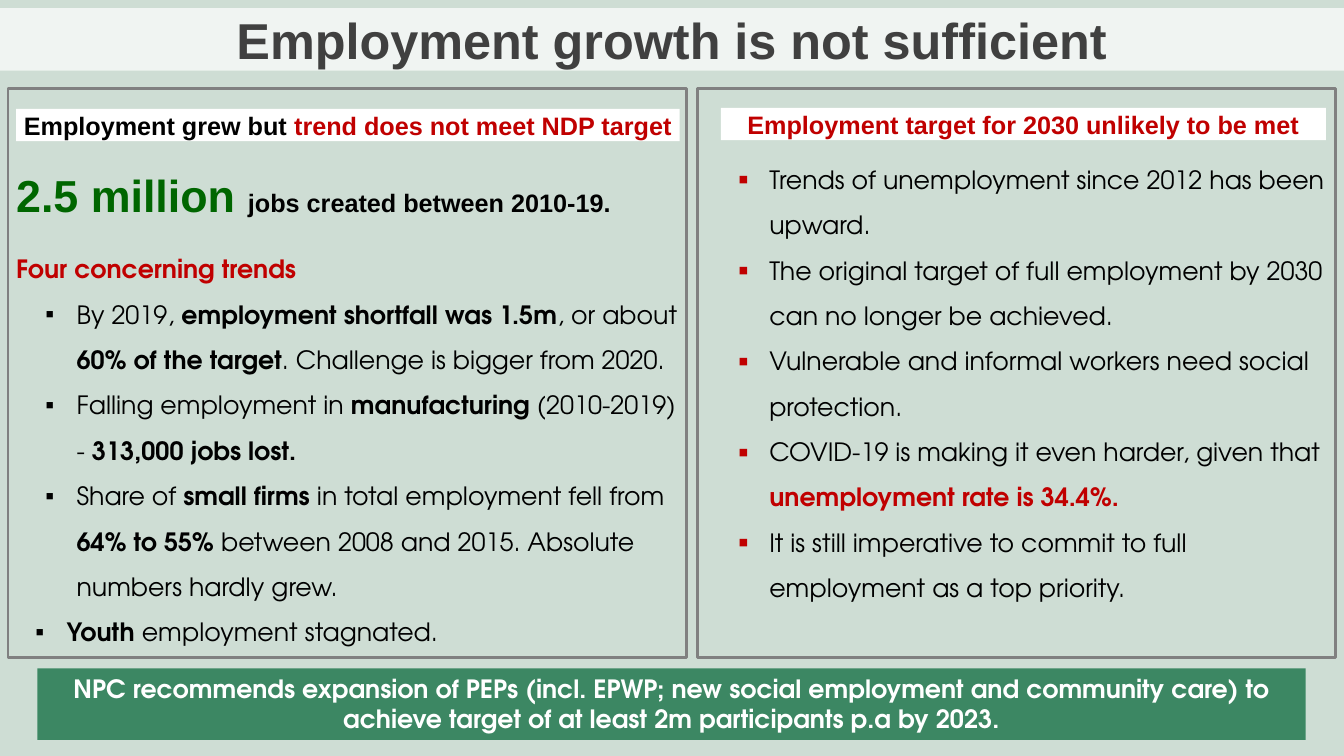
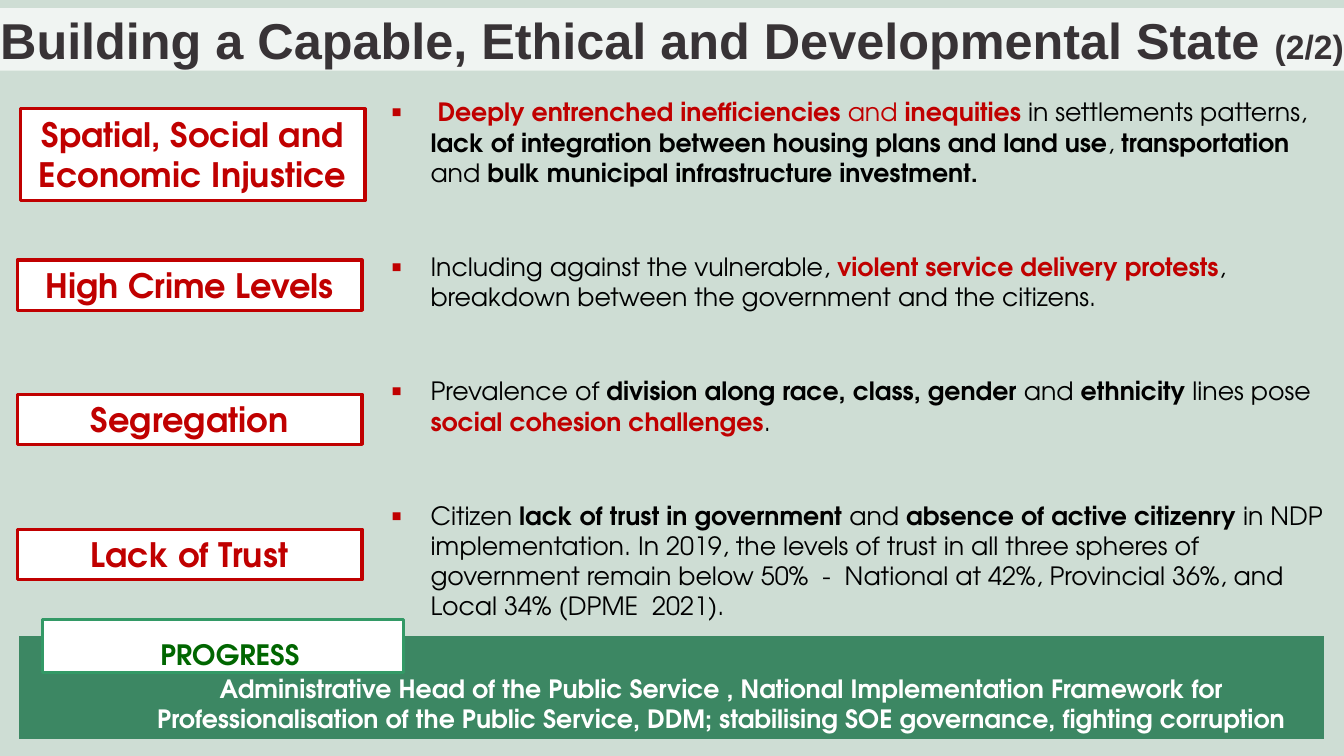
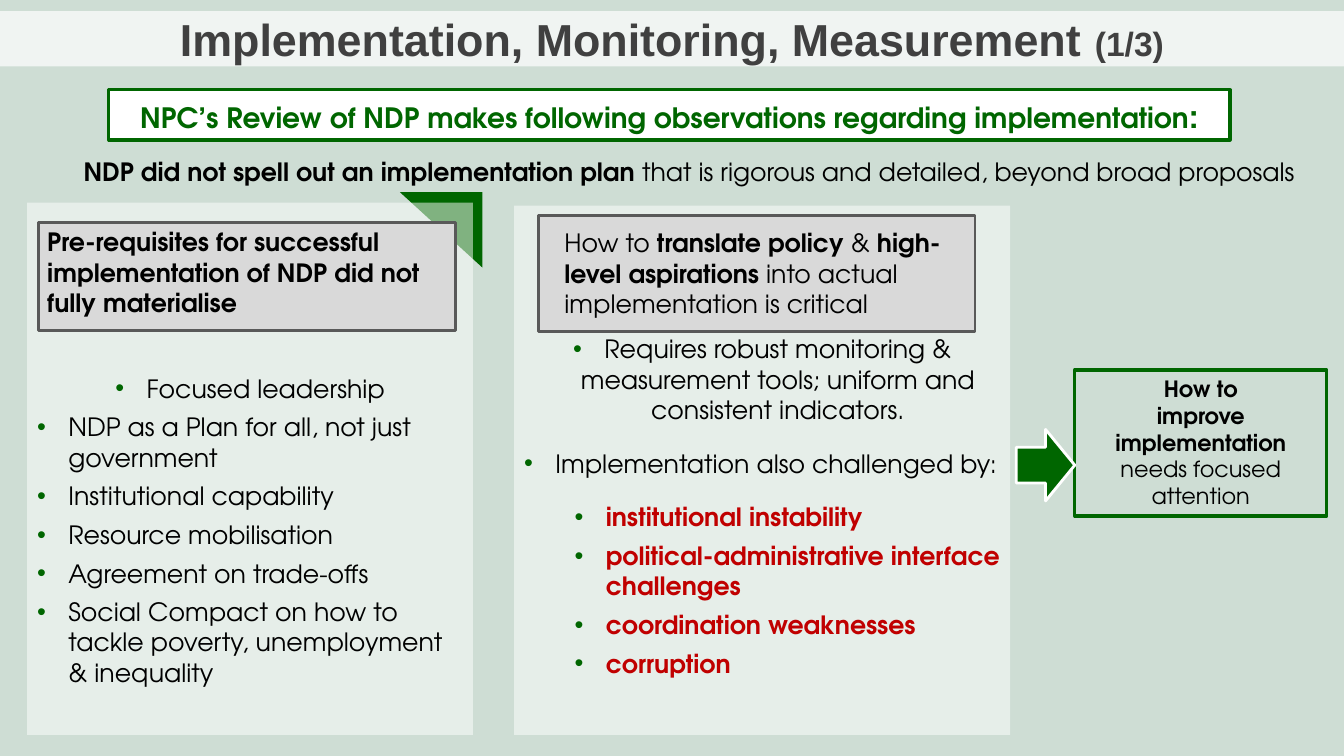
import pptx
import pptx.util
import pptx.dml.color
import pptx.enum.shapes
import pptx.enum.text
import pptx.oxml
import pptx.oxml.ns

Inches = pptx.util.Inches
Pt = pptx.util.Pt
Shape = pptx.enum.shapes.MSO_SHAPE
Align = pptx.enum.text.PP_ALIGN
qn = pptx.oxml.ns.qn

COLOURS = {
    "page": "CEDDD4", "white": "FFFFFF", "ink": "000000", "title": "404040",
    "dark_title": "383336", "red": "C00000", "green": "006600",
    "band": "3C8763", "mint": "339966", "grey": "808080",
    "panel": "D9D9D9", "panel_edge": "595959",
}
BODY, HEAD = "TeX Gyre Adventor", "Arial"

# A span that starts with one of these marks takes the format beside it
MARKS = {
    "*": {"bold": True},
    "!": {"bold": True, "colour": "red"},
    "~": {"colour": "red"},
    "@": {"bold": True, "name": HEAD},
    "#": {"bold": True, "name": HEAD, "size": Pt(32), "colour": "green"},
    "^": {"size": Pt(24)},
}

# Paragraph formats
CENTRED = {"alignment": Align.CENTER}
WIDE = {"line_spacing": 1.5}
RED_SQUARE = ("▪", "red")
GREEN_DOT = ("•", "green")


class Deck:
    """Holds the style and the current slide."""

    def __init__(self):
        self.show = pptx.Presentation()
        self.show.slide_width, self.show.slide_height = Inches(13.33), Inches(7.5)
        self.paint(self.show.slide_master.background.fill, "page")
        self.page = None

    def colour(self, name):
        return pptx.dml.color.RGBColor.from_string(COLOURS[name])

    def paint(self, fill, name):
        fill.solid()
        fill.fore_color.rgb = self.colour(name)

    def fade(self, shape, percent):
        """Make the fill of a shape partly transparent."""
        tint = shape._element.spPr.find(qn("a:solidFill")).find(qn("a:srgbClr"))
        tint.append(self.element("alpha", val=percent * 1000))

    def element(self, tag, **values):
        item = pptx.oxml.parse_xml(
            f'<a:{tag} xmlns:a="http://schemas.openxmlformats.org/drawingml/2006/main"/>')
        for name, value in values.items():
            item.set(name, str(value))
        return item

    def place(self, shape, at):
        for name, value in zip(("left", "top", "width", "height"), at):
            setattr(shape, name, Inches(value))

    def start(self, title, size=36, colour="title", top=0.08, height=0.62):
        """Add a slide with its title band."""
        self.page = self.show.slides.add_slide(self.show.slide_layouts[5])
        band = self.page.shapes.title
        self.place(band, (0, top, 13.33, height))
        self.paint(band.fill, "white")
        self.fade(band, 70)
        self.typeset(band, [title], CENTRED | {"space_before": Pt(1)}, (0, 0.01, 0, 0),
                     name=HEAD, size=Pt(size), colour=colour, bold=True)

    def typeset(self, shape, lines, layout=None, margins=(0.1, 0.05, 0.1, 0.05), **look):
        """Fill a shape with lines; a line is text or (text, paragraph format)."""
        frame = shape.text_frame
        frame.word_wrap = True
        frame.auto_size = pptx.enum.text.MSO_AUTO_SIZE.NONE
        frame.vertical_anchor = pptx.enum.text.MSO_ANCHOR.TOP
        for side, value in zip(("left", "top", "right", "bottom"), margins):
            setattr(frame, f"margin_{side}", Inches(value))
        for number, line in enumerate(lines):
            text, extra = (line, {}) if isinstance(line, str) else line
            para = frame.add_paragraph() if number else frame.paragraphs[0]
            self.arrange(para, (layout or {}) | extra)
            for part in text.split("|"):
                mark = MARKS.get(part[0])
                span = para.add_run()
                span.text = part[1:] if mark else part
                self.style(span.font, look | (mark or {}))

    def style(self, font, look):
        values = {"name": BODY, "size": Pt(18), "bold": False, "colour": "ink"} | look
        font.color.rgb = self.colour(values.pop("colour"))
        for name, value in values.items():
            setattr(font, name, value)

    def arrange(self, para, layout):
        values = dict(layout)
        indent, hang = values.pop("indent", (0, 0))
        bullet = values.pop("bullet", None)
        scale = values.pop("scale", 100)
        for name, value in values.items():
            setattr(para, name, value)
        props = para._p.get_or_add_pPr()
        props.set("marL", str(Inches(indent)))
        props.set("indent", str(-Inches(hang)))
        if bullet:
            sign, tint = bullet
            holder = self.element("buClr")
            holder.append(self.element("srgbClr", val=COLOURS[tint]))
            props.append(holder)
            props.append(self.element("buSzPct", val=scale * 1000))
            props.append(self.element("buFont", typeface=HEAD))
            props.append(self.element("buChar", char=sign))

    def text(self, at, lines, layout=None, **options):
        box = self.page.shapes.add_textbox(*map(Inches, at))
        self.typeset(box, lines, layout, **options)

    def shape(self, at, fill=None, line=None, width=2.25, kind=Shape.RECTANGLE, alpha=None):
        item = self.page.shapes.add_shape(kind, *map(Inches, at))
        item.shadow.inherit = False
        if fill:
            self.paint(item.fill, fill)
        else:
            item.fill.background()
        if alpha:
            self.fade(item, alpha)
        if line:
            item.line.color.rgb = self.colour(line)
            item.line.width = Pt(width)
        else:
            item.line.fill.background()
        return item

    def label(self, at, lines, layout=None, fill="white", line=None, alpha=None, **options):
        """Add a rectangle with text."""
        self.typeset(self.shape(at, fill, line, alpha=alpha), lines, layout, **options)


def employment(deck):
    deck.start("Employment growth is not sufficient")
    tight = (0, 0.01, 0, 0)

    # Left panel
    points = WIDE | {"indent": (0.6, 0.31), "bullet": ("▪", "ink")}
    deck.text((0.16, 1.39, 6.58, 5.08), [
        ("#2.5 million |@jobs created between 2010-19.", WIDE | {"space_after": Pt(12)}),
        ("!Four concerning trends", WIDE),
        ("By 2019, |*employment shortfall was 1.5m|, or about |*60% of the target"
         "|. Challenge is bigger from 2020.", points),
        ("Falling employment in |*manufacturing |(2010-2019) - |*313,000 jobs lost.", points),
        ("Share of |*small firms |in total employment fell from |*64% to 55% "
         "|between 2008 and 2015. Absolute numbers hardly grew.", points),
        ("*Youth |employment stagnated.", points | {"indent": (0.5, 0.31)}),
    ], margins=tight)
    deck.label((0.16, 1.08, 6.58, 0.32),
               ["Employment grew but |!trend does not meet NDP target"],
               margins=tight, name=HEAD, bold=True)

    # Right panel
    deck.label((7.15, 1.07, 6, 0.32), ["Employment target for 2030 unlikely to be met"],
               margins=tight, name=HEAD, bold=True, colour="red")
    deck.text((7.32, 1.47, 5.83, 4.56), [
        "Trends of unemployment since 2012 has been upward.",
        "The original target of full employment by 2030 can no longer be achieved.",
        "Vulnerable and informal workers need social protection.",
        "COVID-19 is making it even harder, given that |!unemployment rate is 34.4%.",
        "It is still imperative to commit to full employment as a top priority.",
    ], WIDE | {"indent": (0.31, 0.31), "bullet": RED_SQUARE, "scale": 120}, margins=tight)

    # Recommendation and panel frames
    deck.label((0.37, 6.63, 12.58, 0.71), [
        "NPC recommends expansion of PEPs (incl. EPWP; new social employment and community "
        "care) to achieve target of at least 2m participants p.a by 2023.",
    ], CENTRED | {"space_before": Pt(1)}, fill="band", colour="white", bold=True)
    for left, width in ((0.08, 6.73), (6.92, 6.33)):
        deck.shape((left, 0.88, width, 5.64), line="grey", width=2)


def capable_state(deck):
    deck.start("Building a Capable, Ethical and Developmental State |^(2/2)", colour="dark_title")

    # Findings
    deck.text((3.88, 0.96, 9.25, 5.25), [
        " |!Deeply entrenched inefficiencies |~and|! inequities |in settlements patterns, "
        "|*lack of integration between housing plans and land use|, |*transportation "
        "|and|* bulk municipal infrastructure investment.",
        "Including against the vulnerable, |!violent service delivery protests"
        "|, breakdown between the government and the citizens.",
        "Prevalence of |*division along race, class, gender |and |*ethnicity "
        "|lines pose |!social cohesion challenges|.",
        "Citizen |*lack of trust in government |and |*absence of active citizenry "
        "|in NDP implementation. In 2019, the levels of trust in all three spheres of "
        "government remain below 50%  -  National at 42%, Provincial 36%, and Local 34% "
        "(DPME  2021).",
    ], {"indent": (0.39, 0.39), "space_after": Pt(45.6), "bullet": RED_SQUARE, "scale": 125},
        margins=(0, 0, 0, 0))

    # Themes
    for left, top, height, theme in (
            (0.2, 1.08, 0.91, "Spatial, Social and Economic Injustice"),
            (0.17, 2.58, 0.5, "High Crime Levels"),
            (0.17, 3.91, 0.5, "Segregation"),
            (0.17, 5.25, 0.5, "Lack of Trust")):
        deck.label((left, top, 3.42, height), [theme], CENTRED, line="red",
                   size=Pt(24), colour="red", bold=True)

    # Progress
    deck.label((0.19, 6.31, 12.94, 1.02), [
        "Administrative Head of the Public Service , National Implementation Framework for "
        "Professionalisation of the Public Service, DDM; stabilising SOE governance, "
        "fighting corruption",
    ], {"indent": (0.99, 0)}, fill="band", margins=(0.1, 0.37, 0.1, 0.05),
        colour="white", bold=True)
    deck.label((0.42, 6.15, 3.58, 0.52), ["PROGRESS"],
               CENTRED | WIDE | {"indent": (0.14, 0)}, line="mint",
               margins=(0, 0.01, 0, 0), size=Pt(20), colour="green", bold=True)


def implementation(deck):
    deck.start("Implementation, Monitoring, Measurement |^(1/3)", size=32, top=0.11, height=0.55)
    deck.label((1.08, 0.89, 11.12, 0.5), [
        "NPC’s Review of NDP makes following observations regarding implementation|^:",
    ], CENTRED, line="green", size=Pt(20), colour="green", bold=True)

    # Left card with its corner
    corner = deck.shape((4, 1.87, 0.75, 0.82), "green", kind=Shape.ISOSCELES_TRIANGLE)
    corner.adjustments[0] = 1
    corner.rotation = 270
    points = {"indent": (0.31, 0.31), "space_after": Pt(6), "bullet": GREEN_DOT}
    deck.label((0.27, 2.01, 4.42, 5.28), [
        "Focused leadership",
        "NDP as a Plan for all, not just government",
        "Institutional capability",
        "Resource mobilisation",
        "Agreement on trade-offs",
        "Social Compact on how to tackle poverty, unemployment & inequality",
    ], points, alpha=50, margins=(0.1, 1.69, 0.1, 0.05))
    deck.shape((0.38, 2.21, 4.14, 1.07), "panel", "panel_edge", 2)
    deck.text((0.37, 2.2, 4.15, 1.01), [
        "Pre-requisites for successful implementation of NDP did not fully materialise",
    ], bold=True)

    # Middle card
    inner = points | {"indent": (0.81, 0.31)}
    deck.label((5.1, 2.04, 4.92, 5.25), [
        "Requires robust monitoring & measurement tools; uniform and consistent indicators.",
        ("Implementation also challenged by:", WIDE),
        ("!institutional instability", inner | WIDE),
        ("!political-administrative interface challenges", inner),
        ("!coordination weaknesses", inner),
        ("!corruption", inner),
    ], points, alpha=50, margins=(0.1, 1.27, 0.1, 0.05))
    deck.shape((5.34, 2.14, 4.33, 1.15), "panel", "panel_edge", 2)
    deck.text((5.5, 2.21, 4.2, 1.31), [
        "How to |*translate policy |&|* high-level aspirations "
        "|into actual implementation is critical",
    ])

    # Lead sentence
    deck.text((0.5, 1.35, 12.67, 0.56), [
        "*NDP did not spell out an implementation plan"
        "| that is rigorous and detailed, beyond broad proposals",
    ], CENTRED | WIDE)

    # Outcome
    deck.label((10.66, 3.67, 2.5, 1.45),
               ["*How to", "*improve implementation |needs focused attention"],
               CENTRED, fill=None, line="green", size=Pt(16))
    deck.shape((10.08, 4.26, 0.58, 0.71), "green", "white", 2, kind=Shape.RIGHT_ARROW)


def main():
    deck = Deck()
    for build in (employment, capable_state, implementation):
        build(deck)
    deck.show.save("out.pptx")


if __name__ == "__main__":
    main()
